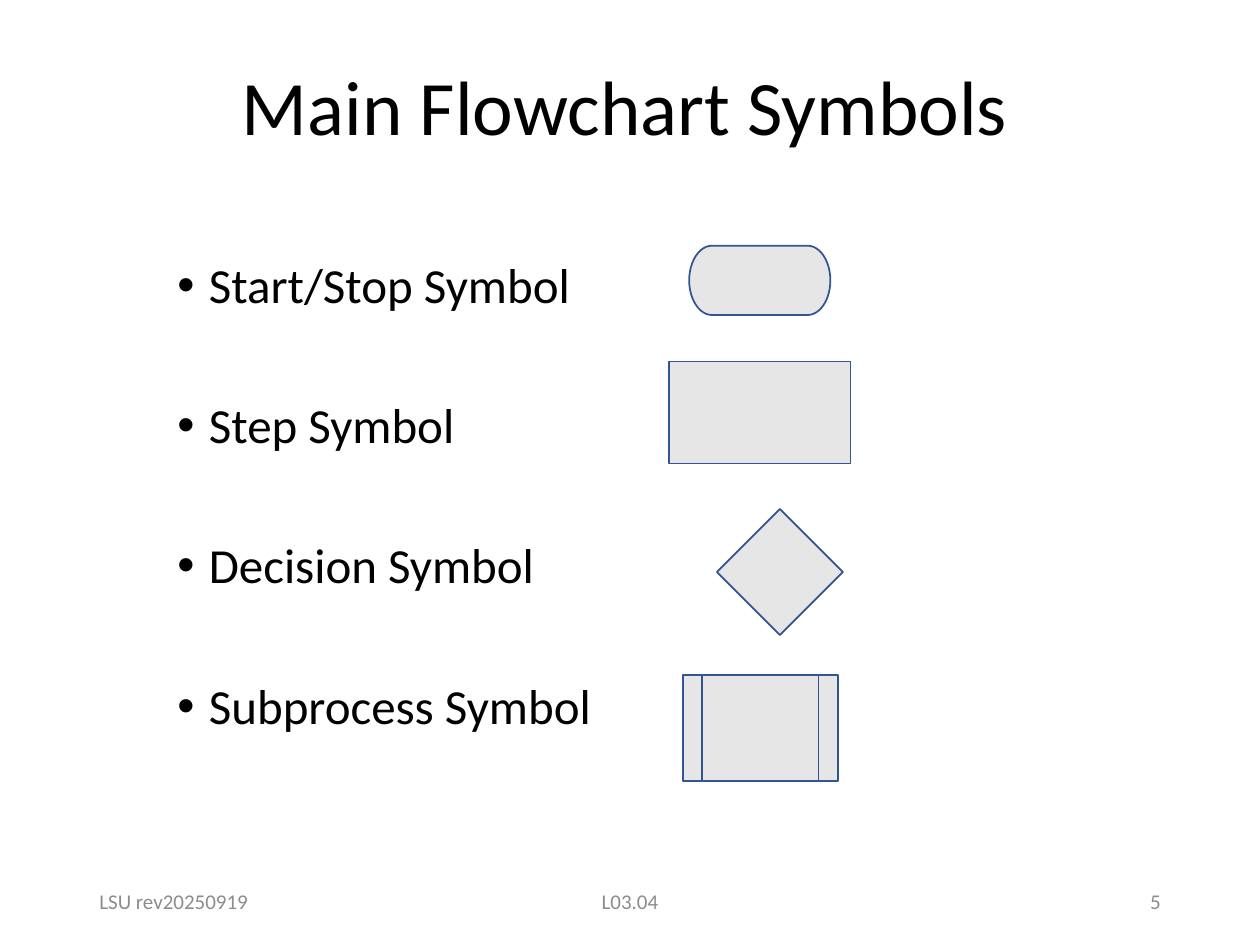
import pptx
import pptx.util
import pptx.dml.color
import pptx.enum.shapes
import pptx.enum.text
from lxml import etree

Inches = pptx.util.Inches
Pt = pptx.util.Pt
RGBColor = pptx.dml.color.RGBColor
Align = pptx.enum.text.PP_ALIGN
Anchor = pptx.enum.text.MSO_ANCHOR
Shape = pptx.enum.shapes.MSO_SHAPE

BLACK = RGBColor(0x00, 0x00, 0x00)
GRAY = RGBColor(0x8C, 0x8C, 0x8C)
PALE = RGBColor(0xE7, 0xE6, 0xE6)
BLUE = RGBColor(0x32, 0x54, 0x91)

deck = pptx.Presentation()
deck.slide_width = Inches(10)
deck.slide_height = Inches(7.5)
slide = deck.slides.add_slide(deck.slide_layouts[6])


def add_frame(left, top, width, height, anchor):
    box = slide.shapes.add_textbox(
        Inches(left), Inches(top), Inches(width), Inches(height))
    frame = box.text_frame
    frame.word_wrap = True
    frame.vertical_anchor = anchor
    return frame


def add_run(para, text, size, color):
    run = para.add_run()
    run.text = text
    run.font.name = "Calibri"
    run.font.size = Pt(size)
    run.font.color.rgb = color


# Title
para = add_frame(1.73, 0.15, 6.46, 1.45, Anchor.MIDDLE).paragraphs[0]
para.alignment = Align.CENTER
para.line_spacing = 0.9
add_run(para, "Main Flowchart Symbols", 44, BLACK)

# Bulleted symbol names
names = ["Start/Stop Symbol", "Step Symbol", "Decision Symbol",
         "Subprocess Symbol"]
frame = add_frame(1.31, 2.02, 4.25, 4.76, Anchor.TOP)
for i, name in enumerate(names):
    para = frame.add_paragraph() if i else frame.paragraphs[0]
    para.line_spacing = 0.9
    if i:
        para.space_before = Pt(50)
    props = para._p.get_or_add_pPr()
    props.set("marL", str(Inches(0.25)))
    props.set("indent", str(Inches(-0.25)))
    space = "{http://schemas.openxmlformats.org/drawingml/2006/main}"
    etree.SubElement(props, space + "buFont", typeface="Arial")
    etree.SubElement(props, space + "buChar", char="•")
    add_run(para, name, 28, BLACK)

# Footer: revision, lesson and page number
footer = [
    (0.69, 2.25, Align.LEFT, "LSU rev20250919"),
    (3.31, 3.38, Align.CENTER, "L03.04"),
    (7.06, 2.25, Align.RIGHT, "5"),
]
for left, width, align, text in footer:
    para = add_frame(left, 6.95, width, 0.4, Anchor.MIDDLE).paragraphs[0]
    para.alignment = align
    add_run(para, text, 12, GRAY)

# Flowchart symbols
symbols = [
    (Shape.FLOWCHART_TERMINATOR, 5.47, 1.95, 1.12, 0.55),
    (Shape.RECTANGLE, 5.31, 2.87, 1.44, 0.81),
    (Shape.DIAMOND, 5.69, 4.04, 1, 1),
    (Shape.FLOWCHART_PREDEFINED_PROCESS, 5.42, 5.36, 1.23, 0.84),
]
for kind, left, top, width, height in symbols:
    symbol = slide.shapes.add_shape(
        kind, Inches(left), Inches(top), Inches(width), Inches(height))
    symbol.shadow.inherit = False
    symbol.fill.solid()
    symbol.fill.fore_color.rgb = PALE
    symbol.line.color.rgb = BLUE
    symbol.line.width = Pt(1)

deck.save("out.pptx")
